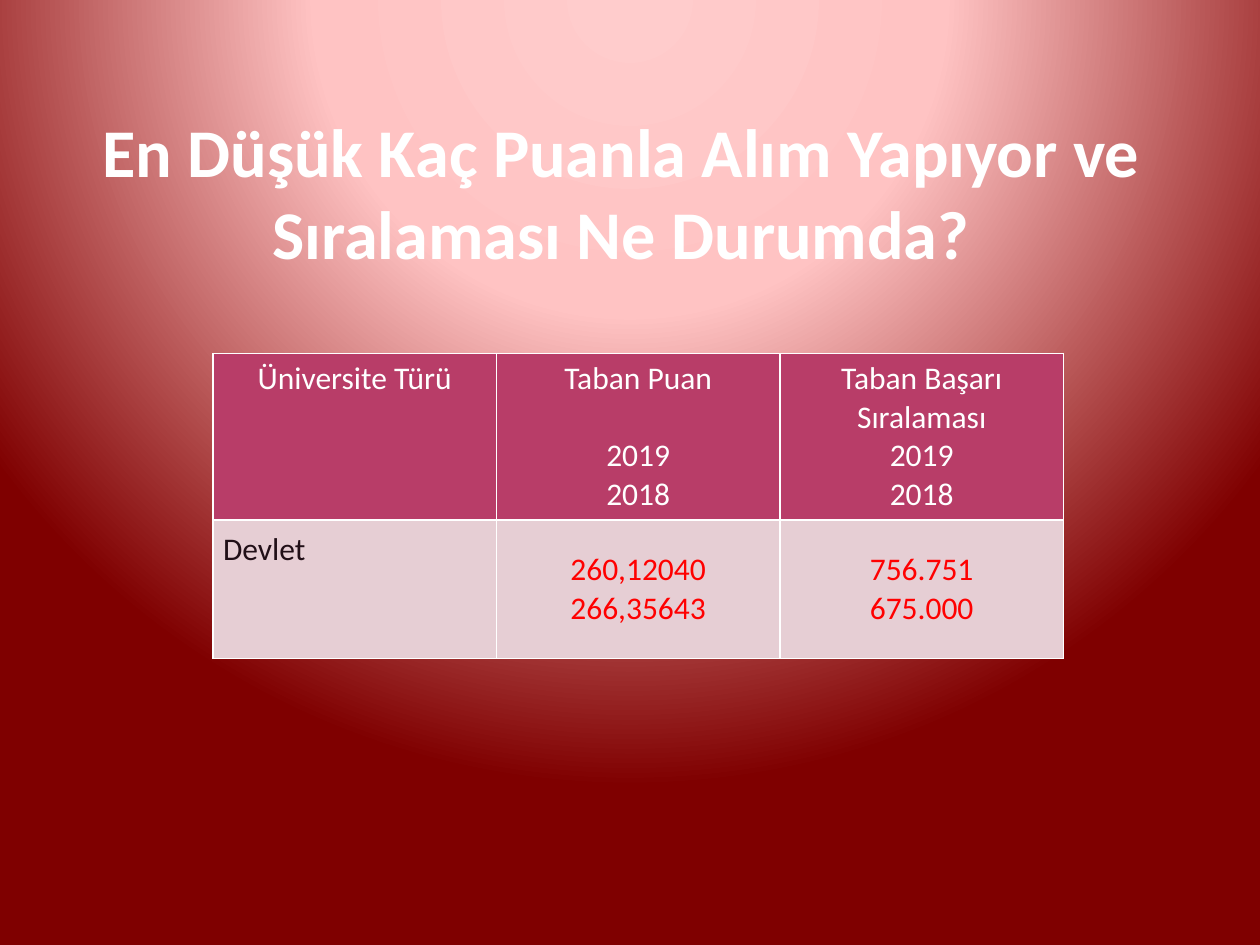
from dataclasses import dataclass

from pptx import Presentation
from pptx import oxml
from pptx import util as u
from pptx.dml import color
from pptx.enum import text
from pptx.oxml import ns

Pt = u.Pt
MID = text.MSO_ANCHOR.MIDDLE
TOP = text.MSO_ANCHOR.TOP
LEFT = text.PP_ALIGN.LEFT
CENTER = text.PP_ALIGN.CENTER


@dataclass(frozen=True)
class Theme:
    font: str = "Calibri"
    white: str = "FFFFFF"
    dark: str = "210F17"
    red: str = "FF0000"
    head: str = "B83D68"
    body: str = "E6CED4"
    glow: tuple = ((0, "FFCCCC"), (40, "FFC3C3"), (100, "7F0000"))
    title: float = 39
    cell: float = 18
    line: float = 22  # height of one line of cell text
    rule: float = 1


THEME = Theme()


def paint_back(slide):
    """Fill the background with a round glow from above the top edge."""
    slide.background.fill.gradient()
    old = slide.element.xpath(".//p:bgPr/a:gradFill")[0]
    stops = "".join(
        f'<a:gs pos="{pos * 1000}"><a:srgbClr val="{tint}"/></a:gs>'
        for pos, tint in THEME.glow
    )
    new = oxml.parse_xml(
        f'<a:gradFill {ns.nsdecls("a")} rotWithShape="1"><a:gsLst>{stops}</a:gsLst>'
        '<a:path path="circle"><a:fillToRect l="50000" t="-80000" r="50000" b="180000"/>'
        "</a:path></a:gradFill>"
    )
    old.getparent().replace(old, new)


def add_run(para, words, size, tint, bold=False):
    run = para.add_run()
    run.text = words
    run.font.name = THEME.font
    run.font.size = Pt(size)
    run.font.bold = bold
    run.font.color.rgb = color.RGBColor.from_string(tint)


def add_title(slide, words):
    box = slide.shapes.add_textbox(Pt(31), Pt(37.5), Pt(648), Pt(90))
    frame = box.text_frame
    frame.word_wrap = True
    frame.auto_size = text.MSO_AUTO_SIZE.NONE
    frame.vertical_anchor = TOP
    frame.margin_top = Pt(25)
    para = frame.paragraphs[0]
    para.alignment = CENTER
    add_run(para, words, THEME.title, THEME.white, bold=True)


def add_edges(cell):
    props = cell._tc.get_or_add_tcPr()
    for side in "LRTB":
        props.append(oxml.parse_xml(
            f'<a:ln{side} {ns.nsdecls("a")} w="{Pt(THEME.rule)}"><a:solidFill>'
            f'<a:srgbClr val="{THEME.white}"/></a:solidFill></a:ln{side}>'
        ))


def fill_cell(cell, lines, tint, back, align=CENTER, anchor=TOP, gap=0):
    """Write lines into a cell; gap is the space after the first line."""
    add_edges(cell)
    cell.fill.solid()
    cell.fill.fore_color.rgb = color.RGBColor.from_string(back)
    cell.vertical_anchor = anchor
    frame = cell.text_frame
    for num, line in enumerate(lines):
        para = frame.add_paragraph() if num else frame.paragraphs[0]
        para.alignment = align
        if num == 0 and gap:
            para.space_after = Pt(gap)
        add_run(para, line, THEME.cell, tint)


def add_scores(slide):
    grid = slide.shapes.add_table(2, 3, Pt(121.7), Pt(202), Pt(486), Pt(174.2)).table
    for col in grid.columns:
        col.width = Pt(162)
    for row, high in zip(grid.rows, (95.2, 79)):
        row.height = Pt(high)

    # Header row
    years = ["2019", "2018"]
    heads = (
        (["Üniversite Türü"], 0),
        (["Taban Puan", *years], THEME.line),
        (["Taban Başarı Sıralaması", *years], 0),
    )
    for col, (lines, gap) in enumerate(heads):
        fill_cell(grid.cell(0, col), lines, THEME.white, THEME.head, gap=gap)

    # State universities
    facts = (
        (["Devlet"], THEME.dark, LEFT, TOP),
        (["260,12040", "266,35643"], THEME.red, CENTER, MID),
        (["756.751", "675.000"], THEME.red, CENTER, MID),
    )
    for col, (lines, tint, align, anchor) in enumerate(facts):
        cell = grid.cell(1, col)
        fill_cell(cell, lines, tint, THEME.body, align, anchor)
        cell.margin_left = cell.margin_right = Pt(5.76)
        cell.margin_top = cell.margin_bottom = Pt(5.76)


def main():
    deck = Presentation()
    deck.slide_width, deck.slide_height = Pt(720), Pt(540)
    slide = deck.slides.add_slide(deck.slide_layouts[6])
    paint_back(slide)
    add_title(slide, "En Düşük Kaç Puanla Alım Yapıyor ve Sıralaması Ne Durumda?")
    add_scores(slide)
    deck.save("out.pptx")


if __name__ == "__main__":
    main()
